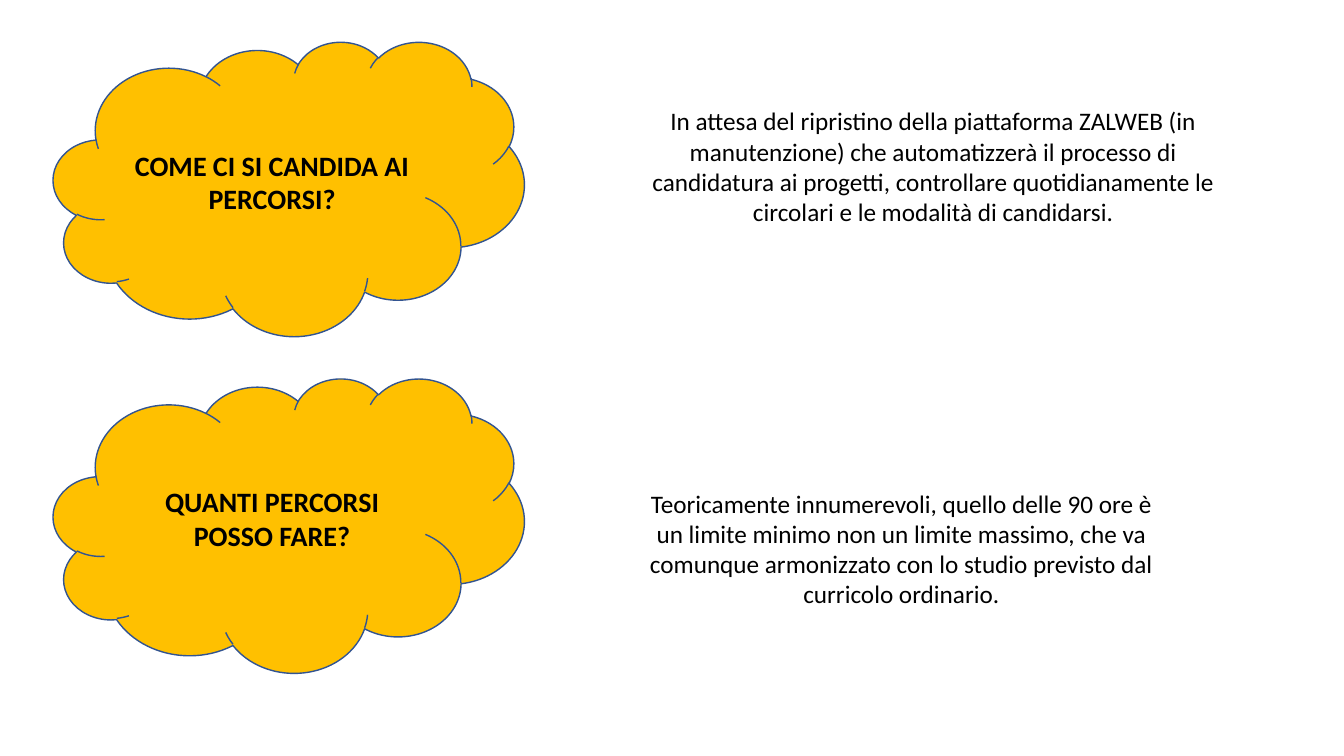
from pptx import Presentation
from pptx.dml.color import RGBColor
from pptx.enum import shapes, text
from pptx.util import Emu, Pt

SCALE = 9144
HUES = {"cloud": "FFC000", "edge": "325491", "ink": "000000"}
ROWS = [
    (41, "COME CI SI CANDIDA AI PERCORSI?", 100, 611,
     "In attesa del ripristino della piattaforma ZALWEB (in manutenzione) "
     "che automatizzerà il processo di candidatura ai progetti, controllare "
     "quotidianamente le circolari e le modalità di candidarsi."),
    (375, "QUANTI PERCORSI POSSO FARE?", 479, 548,
     "Teoricamente innumerevoli, quello delle 90 ore è un limite minimo non "
     "un limite massimo, che va comunque armonizzato con lo studio previsto "
     "dal curricolo ordinario."),
]


def px(*sizes):
    return [Emu(size * SCALE) for size in sizes]


def hue(name):
    return RGBColor.from_string(HUES[name])


def write(shape, words, size, bold=False):
    frame = shape.text_frame
    frame.text = words
    frame.word_wrap = True
    line = frame.paragraphs[0]
    line.alignment = text.PP_ALIGN.CENTER
    font = line.runs[0].font
    font.name = "Calibri"
    font.size = Pt(size)
    font.bold = bold
    font.color.rgb = hue("ink")
    return frame


def add_cloud(slide, top, words):
    cloud = slide.shapes.add_shape(
        shapes.MSO_SHAPE.CLOUD, *px(53, top, 467, 292))
    cloud.shadow.inherit = False
    cloud.fill.solid()
    cloud.fill.fore_color.rgb = hue("cloud")
    cloud.line.color.rgb = hue("edge")
    cloud.line.width = Pt(1)
    frame = write(cloud, words, 20, True)
    frame.vertical_anchor = text.MSO_ANCHOR.MIDDLE


def add_answer(slide, top, width, words):
    box = slide.shapes.add_textbox(*px(620, top, width, 131))
    frame = write(box, words, 18)
    frame.auto_size = text.MSO_AUTO_SIZE.SHAPE_TO_FIT_TEXT


def main():
    deck = Presentation()
    deck.slide_width, deck.slide_height = px(1333, 750)
    slide = deck.slides.add_slide(deck.slide_layouts[6])
    for top, question, start, width, answer in ROWS:
        add_cloud(slide, top, question)
        add_answer(slide, start, width, answer)
    deck.save("out.pptx")


if __name__ == "__main__":
    main()
